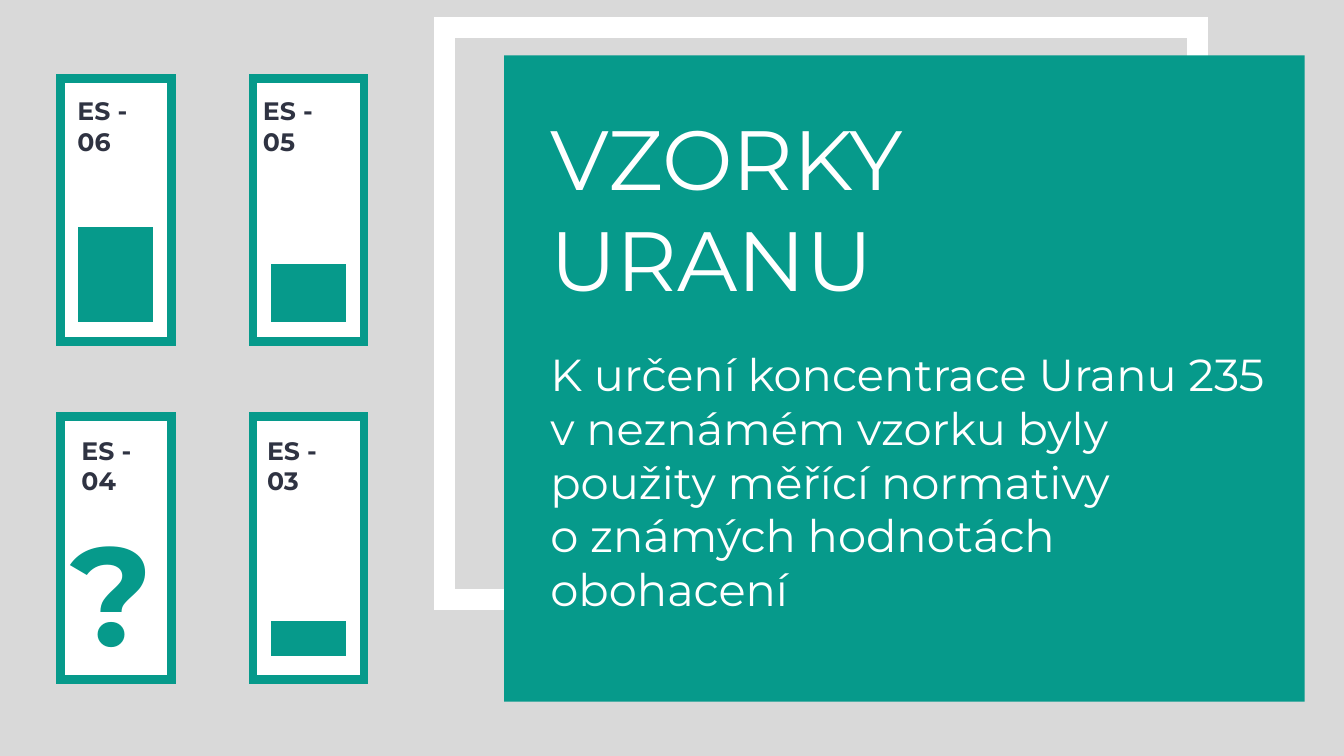
from dataclasses import dataclass

from lxml import etree
from pptx import Presentation
from pptx.dml.color import RGBColor
from pptx.enum import shapes, text
from pptx.oxml import ns
from pptx.util import Inches, Pt


@dataclass(frozen=True)
class Theme:
    font: str = "Montserrat"
    backdrop: str = "D9D9D9"
    teal: str = "069A8B"
    white: str = "FFFFFF"
    ink: str = "2F3342"
    title: int = 60
    body: int = 32
    label: int = 18
    mark: int = 100
    frame_line: int = 15
    sample_line: int = 6


THEME = Theme()
CARD_WIDTH, CARD_HEIGHT = 1.1, 2.61
LEVEL_WIDTH = 0.66
LABEL_SIZE = (0.88, 0.71)

# card left, card top, label offset, label, level top, level height
SAMPLES = [
    (0.6, 0.78, (0.07, 0.12), "ES - 06", 2.29, 0.86),
    (2.51, 0.78, (0, 0.12), "ES - 05", 2.66, 0.49),
    (0.6, 4.13, (0.11, 0.14), "ES - 04", None, None),
    (2.51, 4.13, (0.04, 0.14), "ES - 03", 6.2, 0.27),
]


def add_box(slide, left, top, width, height, fill=None, line=None, weight=0):
    box = slide.shapes.add_shape(
        shapes.MSO_SHAPE.RECTANGLE, *map(Inches, (left, top, width, height)))
    box.shadow.inherit = False
    if fill:
        box.fill.solid()
        box.fill.fore_color.rgb = RGBColor.from_string(fill)
    else:
        box.fill.background()
    if line:
        box.line.color.rgb = RGBColor.from_string(line)
        box.line.width = Pt(weight)
        outline = box.line.fill._xPr
        etree.SubElement(outline, ns.qn("a:miter"), lim="800000")
    else:
        box.line.fill.background()


def add_text(slide, left, top, width, height, *paragraphs, size, color, bold=False):
    frame = slide.shapes.add_textbox(
        *map(Inches, (left, top, width, height))).text_frame
    frame.word_wrap = True
    frame.auto_size = text.MSO_AUTO_SIZE.SHAPE_TO_FIT_TEXT
    frame.text = "\n".join(paragraphs)
    for paragraph in frame.paragraphs:
        for run in paragraph.runs:
            run.font.name = THEME.font
            run.font.size = Pt(size)
            run.font.bold = bold
            run.font.color.rgb = RGBColor.from_string(color)


def add_sample(slide, left, top, label_offset, label, level_top, level_height):
    add_box(slide, left, top, CARD_WIDTH, CARD_HEIGHT,
            fill=THEME.white, line=THEME.teal, weight=THEME.sample_line)
    if level_top is None:
        add_text(slide, left, top + 0.85, 0.74, 1.78, "?",
                 size=THEME.mark, color=THEME.teal, bold=True)
    else:
        add_box(slide, left + (CARD_WIDTH - LEVEL_WIDTH) / 2, level_top,
                LEVEL_WIDTH, level_height,
                fill=THEME.teal, line=THEME.teal, weight=THEME.sample_line)
    add_text(slide, left + label_offset[0], top + label_offset[1], *LABEL_SIZE,
             label, size=THEME.label, color=THEME.ink, bold=True)


def add_panel(slide):
    add_box(slide, 4.41, 0.27, 7.47, 5.68,
            line=THEME.white, weight=THEME.frame_line)
    add_box(slide, 5, 0.55, 7.94, 6.41, fill=THEME.teal)
    add_text(slide, 5.36, 1.01, 5.82, 2.12, "VZORKY URANU",
             size=THEME.title, color=THEME.white)
    add_text(slide, 5.36, 3.39, 7.29, 2.79,
             "K určení koncentrace Uranu 235 v neznámém vzorku byly "
             "použity měřící normativy",
             "o známých hodnotách obohacení",
             size=THEME.body, color=THEME.white)


def main():
    deck = Presentation()
    deck.slide_width, deck.slide_height = Inches(13.33), Inches(7.5)
    slide = deck.slides.add_slide(deck.slide_layouts[6])
    slide.background.fill.solid()
    slide.background.fill.fore_color.rgb = RGBColor.from_string(THEME.backdrop)
    add_panel(slide)
    for sample in SAMPLES:
        add_sample(slide, *sample)
    deck.save("out.pptx")


if __name__ == "__main__":
    main()
